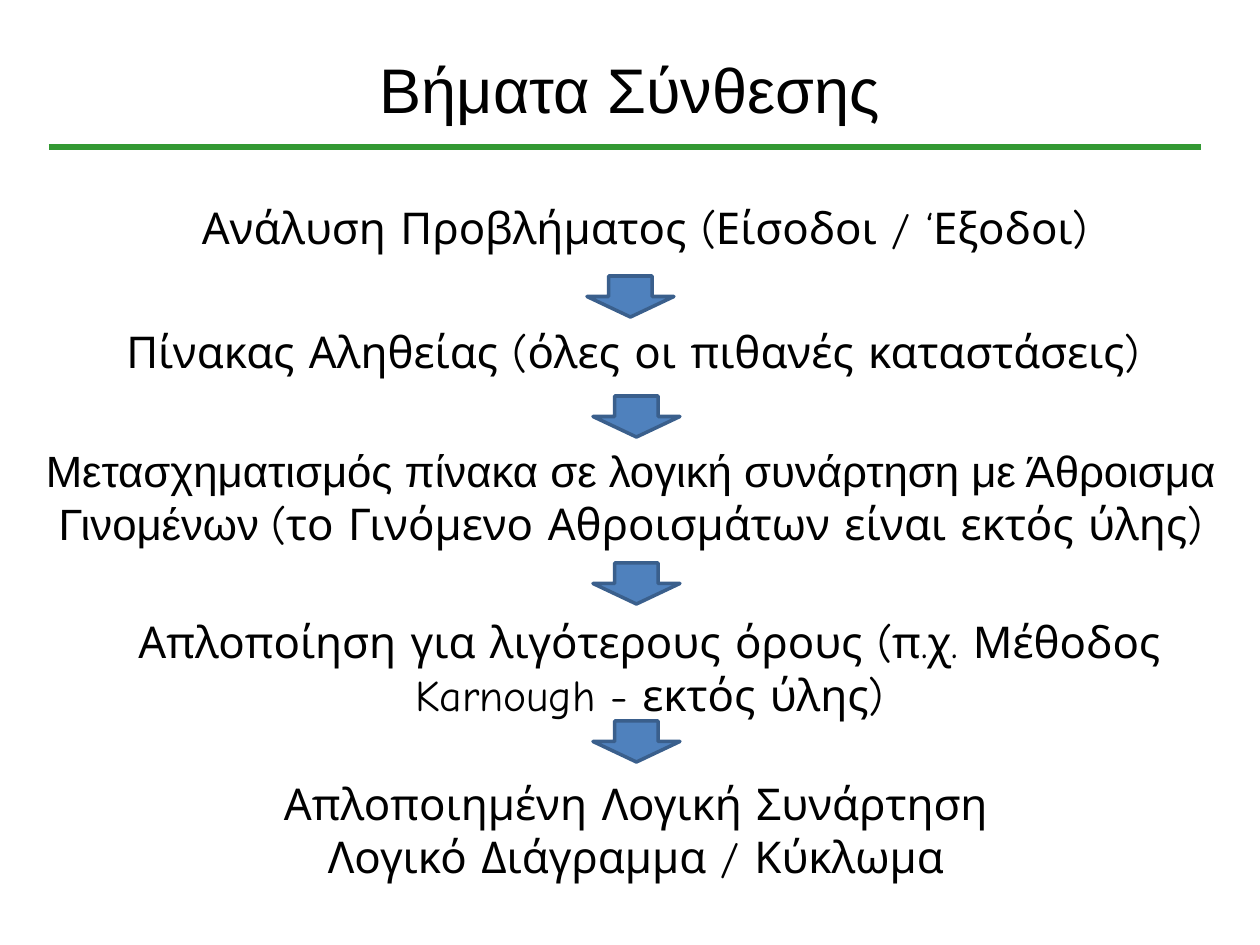
"""Build a slide with the steps of logic synthesis, joined by down arrows."""
from lxml.etree import SubElement
from pptx import Presentation
from pptx.dml.color import RGBColor
from pptx.enum.shapes import MSO_CONNECTOR, MSO_SHAPE
from pptx.enum.text import MSO_ANCHOR, PP_ALIGN
from pptx.oxml.ns import qn
from pptx.util import Pt

SCALE = 914400 / 126
INK = {"text": "000000", "rule": "339933", "arrow": "4F81BD", "edge": "3A5F8C"}
SANS, HAND = "Arial", "Comic Neue"


def px(*nums):
    return [round(num * SCALE) for num in nums]


def hue(name):
    return RGBColor.from_string(INK[name])


deck = Presentation()
deck.slide_width, deck.slide_height = px(1260, 945)
slide = deck.slides.add_slide(deck.slide_layouts[6])

texts = [
    ((63, 38, 1134, 100), 36, MSO_ANCHOR.MIDDLE, [[("Βήματα Σύνθεσης", SANS)]]),
    ((69, 195, 1152, 66), 25, MSO_ANCHOR.TOP,
     [[("Ανάλυση Προβλήματος (Είσοδοι / ‘Εξοδοι)", HAND)]]),
    ((45, 319, 1176, 66), 25, MSO_ANCHOR.TOP,
     [[("Πίνακας Αληθείας (όλες οι πιθανές καταστάσεις)", HAND)]]),
    ((24, 438, 1213, 118), 25, MSO_ANCHOR.TOP,
     [[("Μετασχηματισμός πίνακα σε λογική συνάρτηση με Άθροισμα Γινομένων ", SANS),
       ("(το Γινόμενο Αθροισμάτων είναι εκτός ύλης)", HAND)]]),
    ((63, 609, 1173, 118), 25, MSO_ANCHOR.TOP,
     [[("Απλοποίηση για λιγότερους όρους (π.χ. Μέθοδος Karnough - εκτός ύλης)", HAND)]]),
    ((108, 771, 1056, 118), 25, MSO_ANCHOR.TOP,
     [[("Απλοποιημένη Λογική Συνάρτηση", HAND)],
      [("Λογικό Διάγραμμα / Κύκλωμα", HAND)]]),
]
for area, size, anchor, lines in texts:
    frame = slide.shapes.add_textbox(*px(*area)).text_frame
    frame.word_wrap = True
    frame.vertical_anchor = anchor
    frame.text = "\n".join("" for line in lines)
    for para, line in zip(frame.paragraphs, lines):
        para.alignment = PP_ALIGN.CENTER
        for words, face in line:
            run = para.add_run()
            run.text = words
            run.font.name = face
            run.font.size = Pt(size)
            run.font.color.rgb = hue("text")

rule = slide.shapes.add_connector(MSO_CONNECTOR.STRAIGHT, *px(49, 147, 1201, 147))
rule.line.color.rgb = hue("rule")
rule.line.width = Pt(3)
SubElement(rule.element.spPr, qn("a:effectLst"))

for left, top in [(587, 276), (593, 396), (593, 563), (593, 721)]:
    arrow = slide.shapes.add_shape(MSO_SHAPE.DOWN_ARROW, *px(left, top, 87, 41))
    arrow.shadow.inherit = False
    arrow.fill.solid()
    arrow.fill.fore_color.rgb = hue("arrow")
    arrow.line.color.rgb = hue("edge")
    arrow.line.width = Pt(2)

deck.save("out.pptx")
